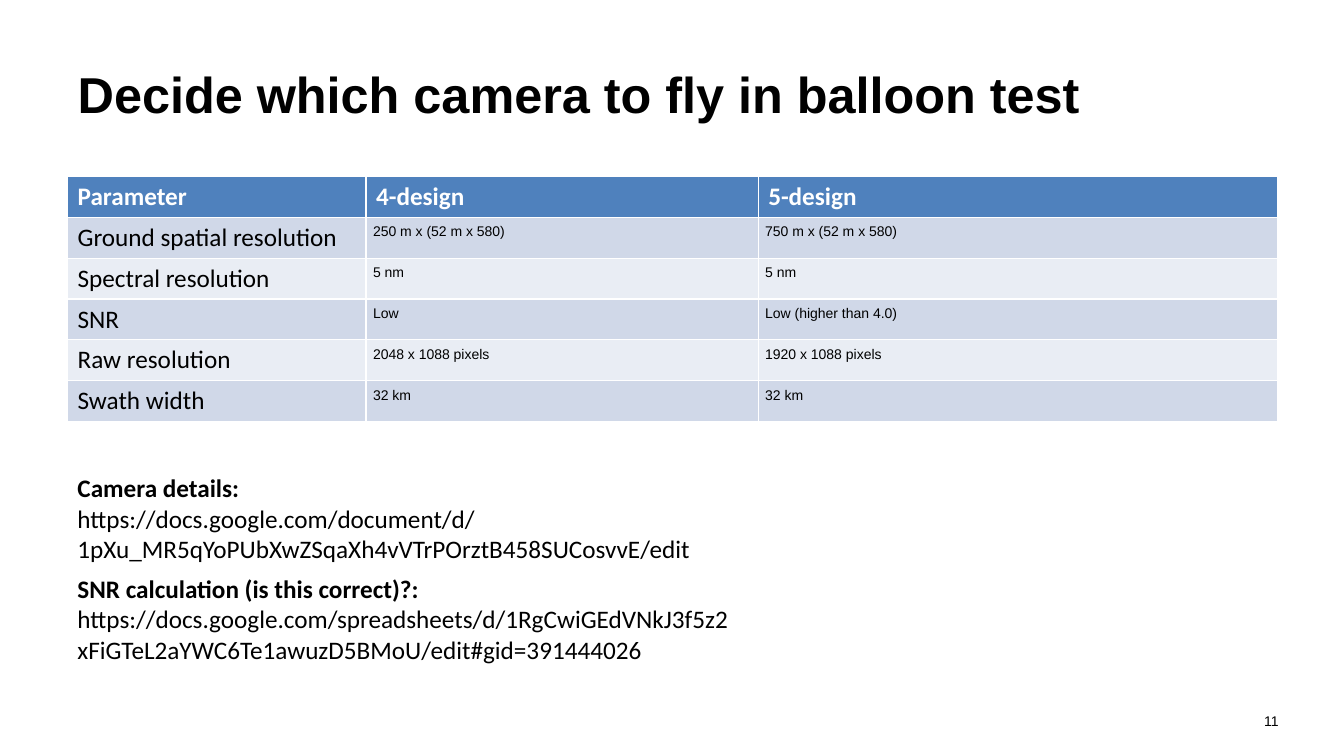
from dataclasses import dataclass

from pptx import Presentation
from pptx.dml.color import RGBColor
from pptx.enum.text import MSO_ANCHOR, MSO_AUTO_SIZE, PP_ALIGN
from pptx.util import Inches, Pt

LEFT, CENTER = PP_ALIGN.LEFT, PP_ALIGN.CENTER
MIDDLE = MSO_ANCHOR.MIDDLE
NO_FIT = MSO_AUTO_SIZE.NONE
TITLE_ONLY = 5


@dataclass(frozen=True)
class Theme:
    heading_font: str = "Arial"
    body_font: str = "Calibri"
    title_size: int = 36
    body_size: int = 18
    small_size: int = 10
    text: str = "000000"
    header_text: str = "FFFFFF"
    header_fill: str = "4F81BD"
    band_fills: tuple[str, str] = ("D0D8E8", "E9EDF4")


@dataclass(frozen=True)
class Reference:
    label: str
    url: str
    top: float
    url_in_own_paragraph: bool


THEME = Theme()
MARGIN = 0.67
CONTENT_WIDTH = 12
COLUMN_WIDTHS = (2.96, 3.89, 5.15)
ROW_HEIGHT = 0.405
VALUE_INSET = Inches(0.07)

CAMERA_ROWS = (
    ("Parameter", "4-design", "5-design"),
    ("Ground spatial resolution", "250 m x (52 m x 580)", "750 m x (52 m x 580)"),
    ("Spectral resolution", "5 nm", "5 nm"),
    ("SNR", "Low", "Low (higher than 4.0)"),
    ("Raw resolution", "2048 x 1088 pixels", "1920 x 1088 pixels"),
    ("Swath width", "32 km", "32 km"),
)

REFERENCES = (
    Reference(
        "Camera details:",
        "https://docs.google.com/document/d/1pXu_MR5qYoPUbXwZSqaXh4vVTrPOrztB458SUCosvvE/edit",
        4.64, True),
    Reference(
        "SNR calculation (is this correct)?: ",
        "https://docs.google.com/spreadsheets/d/1RgCwiGEdVNkJ3f5z2xFiGTeL2aYWC6Te1awuzD5BMoU/edit#gid=391444026",
        5.64, False),
)


def set_font(font, name: str, size: int, color: str = THEME.text, bold: bool = False) -> None:
    font.name = name
    font.size = Pt(size)
    font.bold = bold
    font.color.rgb = RGBColor.from_string(color)


def add_title(slide, wording: str) -> None:
    title = slide.shapes.title
    title.left, title.top = Inches(MARGIN), Inches(0.3)
    title.width, title.height = Inches(CONTENT_WIDTH), Inches(1.25)
    frame = title.text_frame
    frame.text = wording
    frame.auto_size = NO_FIT
    frame.vertical_anchor = MIDDLE
    heading = frame.paragraphs[0]
    heading.alignment = LEFT
    set_font(heading.font, THEME.heading_font, THEME.title_size, bold=True)


def add_camera_table(slide) -> None:
    cameras = slide.shapes.add_table(
        len(CAMERA_ROWS), len(COLUMN_WIDTHS), Inches(MARGIN), Inches(1.75),
        Inches(CONTENT_WIDTH), Inches(ROW_HEIGHT * len(CAMERA_ROWS))).table
    for column, width in zip(cameras.columns, COLUMN_WIDTHS):
        column.width = Inches(width)

    for row, entries in enumerate(CAMERA_ROWS):
        for column, entry in enumerate(entries):
            cell = cameras.cell(row, column)
            cell.text = entry
            font = cell.text_frame.paragraphs[0].font
            fill = THEME.band_fills[(row - 1) % 2]
            if row == 0:
                fill = THEME.header_fill
                set_font(font, THEME.body_font, THEME.body_size, THEME.header_text, True)
            elif column == 0:
                set_font(font, THEME.body_font, THEME.body_size)
            else:
                set_font(font, THEME.heading_font, THEME.small_size)
                cell.margin_left = cell.margin_right = VALUE_INSET
                cell.margin_top = cell.margin_bottom = VALUE_INSET
            cell.fill.solid()
            cell.fill.fore_color.rgb = RGBColor.from_string(fill)


def add_reference(slide, reference: Reference) -> None:
    frame = slide.shapes.add_textbox(
        Inches(MARGIN), Inches(reference.top), Inches(6.67), Inches(1.01)).text_frame
    frame.word_wrap = True
    label_line = frame.paragraphs[0]
    url_line = frame.add_paragraph() if reference.url_in_own_paragraph else label_line
    for line, wording, bold in ((label_line, reference.label, True),
                                (url_line, reference.url, False)):
        run = line.add_run()
        run.text = wording
        set_font(run.font, THEME.body_font, THEME.body_size, bold=bold)


def add_page_number(slide, number: str) -> None:
    frame = slide.shapes.add_textbox(
        Inches(12.36), Inches(7.02), Inches(0.5), Inches(0.4)).text_frame
    frame.word_wrap = True
    frame.text = number
    page_number = frame.paragraphs[0]
    page_number.alignment = CENTER
    set_font(page_number.font, THEME.heading_font, THEME.small_size)


def main() -> None:
    deck = Presentation()
    deck.slide_width, deck.slide_height = Inches(13.33), Inches(7.5)
    slide = deck.slides.add_slide(deck.slide_layouts[TITLE_ONLY])

    # Title and camera comparison
    add_title(slide, "Decide which camera to fly in balloon test")
    add_camera_table(slide)

    # Links to supporting documents
    for reference in REFERENCES:
        add_reference(slide, reference)

    # Footer
    add_page_number(slide, "11")
    deck.save("out.pptx")


if __name__ == "__main__":
    main()
